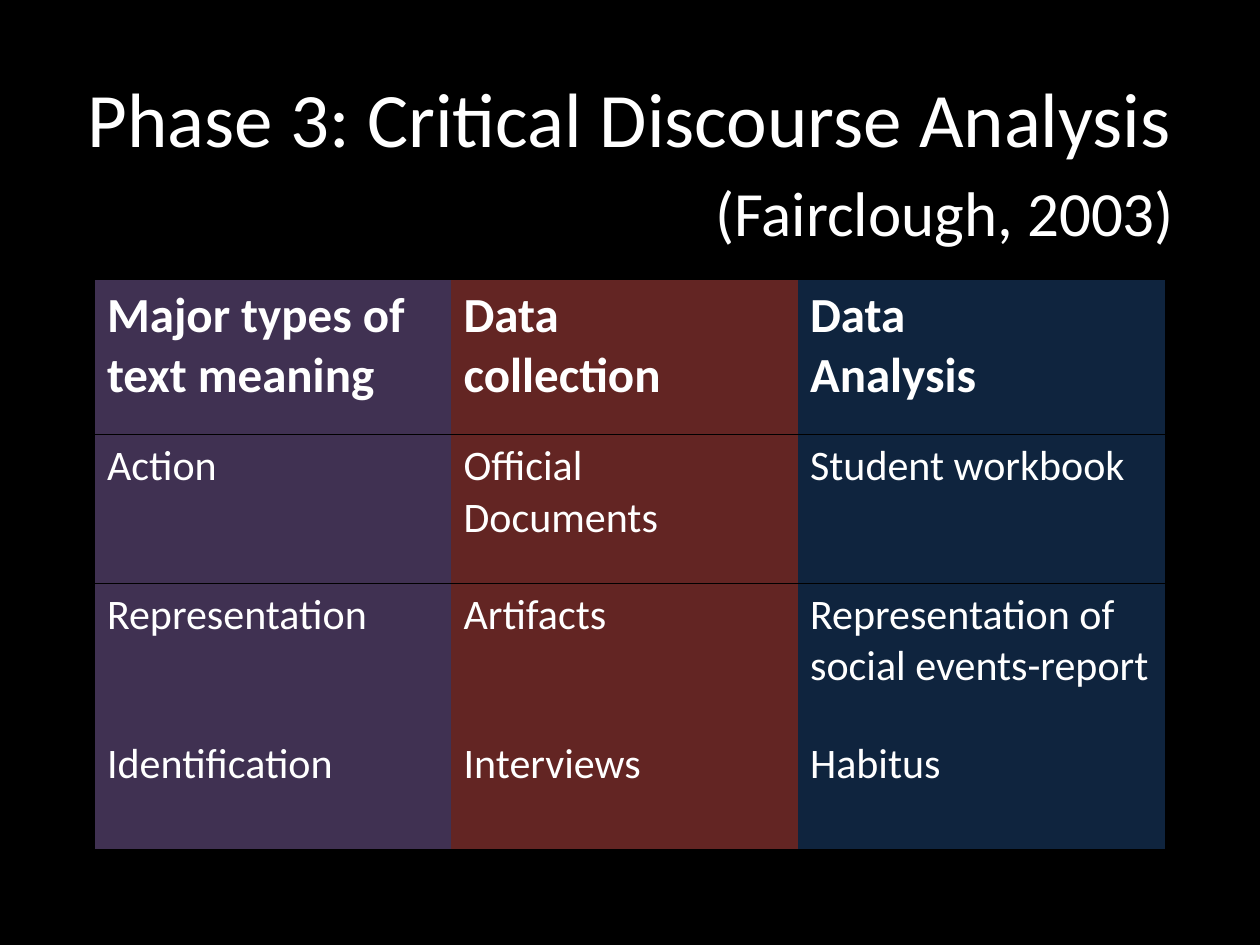
from dataclasses import dataclass

from lxml import etree
from pptx import Presentation
from pptx.dml.color import RGBColor
from pptx.enum import text
from pptx.oxml import ns
from pptx.util import Inches, Pt

TITLE = "Phase 3: Critical Discourse Analysis"
CITATION = "(Fairclough, 2003)"

# Each cell is text; a line break starts a new paragraph.
ROWS = [
    ("Major types of text meaning", "Data\ncollection", "Data\nAnalysis"),
    ("Action", "Official\nDocuments", "Student workbook"),
    ("Representation", "Artifacts", "Representation of social events-report"),
    ("Identification", "Interviews", "Habitus"),
]
COLUMN_WIDTHS = (2.83, 2.75, 2.92)
ROW_HEIGHTS = (1.23, 1.18, 1.18, 0.93)
TABLE_LEFT, TABLE_TOP = 0.75, 2.22


@dataclass(frozen=True)
class Theme:
    font: str = "Calibri"
    background: str = "000000"
    ink: str = "FFFFFF"
    rule: str = "000000"
    columns: tuple = ("403152", "632523", "0F243E")
    title_size: int = 44
    citation_size: int = 36
    header_size: int = 28
    body_size: int = 24


THEME = Theme()
NO_STYLE_NO_GRID = "{2D5ABB26-0587-4C30-8999-92F81FD0307C}"


def write(frame, content, size, bold=False):
    frame.text = content
    for paragraph in frame.paragraphs:
        font = paragraph.font
        font.name, font.size, font.bold = THEME.font, Pt(size), bold
        font.color.rgb = RGBColor.from_string(THEME.ink)


def add_border(cell, side):
    """Draw a one-point rule on a side of the cell: lnT or lnB."""
    line = etree.Element(ns.qn(f"a:{side}"), w=str(Pt(1)))
    fill = etree.SubElement(line, ns.qn("a:solidFill"))
    etree.SubElement(fill, ns.qn("a:srgbClr"), val=THEME.rule)
    cell._tc.get_or_add_tcPr().insert(0, line)


def add_heading(slide):
    title = slide.shapes.title
    title.left, title.top = Inches(0.5), Inches(0.3)
    title.width, title.height = Inches(9), Inches(1.25)
    title.text_frame.vertical_anchor = text.MSO_ANCHOR.MIDDLE
    write(title.text_frame, TITLE, THEME.title_size)
    title.text_frame.paragraphs[0].alignment = text.PP_ALIGN.CENTER

    citation = slide.shapes.add_textbox(
        Inches(5.58), Inches(1.33), Inches(4.17), Inches(0.71))
    citation.text_frame.word_wrap = True
    write(citation.text_frame, CITATION, THEME.citation_size)


def add_meaning_table(slide):
    table = slide.shapes.add_table(
        len(ROWS), len(COLUMN_WIDTHS), Inches(TABLE_LEFT), Inches(TABLE_TOP),
        Inches(sum(COLUMN_WIDTHS)), Inches(sum(ROW_HEIGHTS))).table
    table._tbl.tblPr.find(ns.qn("a:tableStyleId")).text = NO_STYLE_NO_GRID
    table.horz_banding = False
    for column, width in zip(table.columns, COLUMN_WIDTHS):
        column.width = Inches(width)
    for row, height in zip(table.rows, ROW_HEIGHTS):
        row.height = Inches(height)

    for row_index, contents in enumerate(ROWS):
        header = row_index == 0
        size = THEME.header_size if header else THEME.body_size
        for column_index, content in enumerate(contents):
            cell = table.cell(row_index, column_index)
            write(cell.text_frame, content, size, bold=header)
            cell.fill.solid()
            cell.fill.fore_color.rgb = RGBColor.from_string(THEME.columns[column_index])
            if row_index < 2:
                add_border(cell, "lnB" if header else "lnT")


def main():
    presentation = Presentation()
    presentation.slide_width, presentation.slide_height = Inches(10), Inches(7.5)
    slide = presentation.slides.add_slide(
        presentation.slide_layouts.get_by_name("Title Only"))
    slide.background.fill.solid()
    slide.background.fill.fore_color.rgb = RGBColor.from_string(THEME.background)
    add_heading(slide)
    add_meaning_table(slide)
    presentation.save("out.pptx")


if __name__ == "__main__":
    main()
